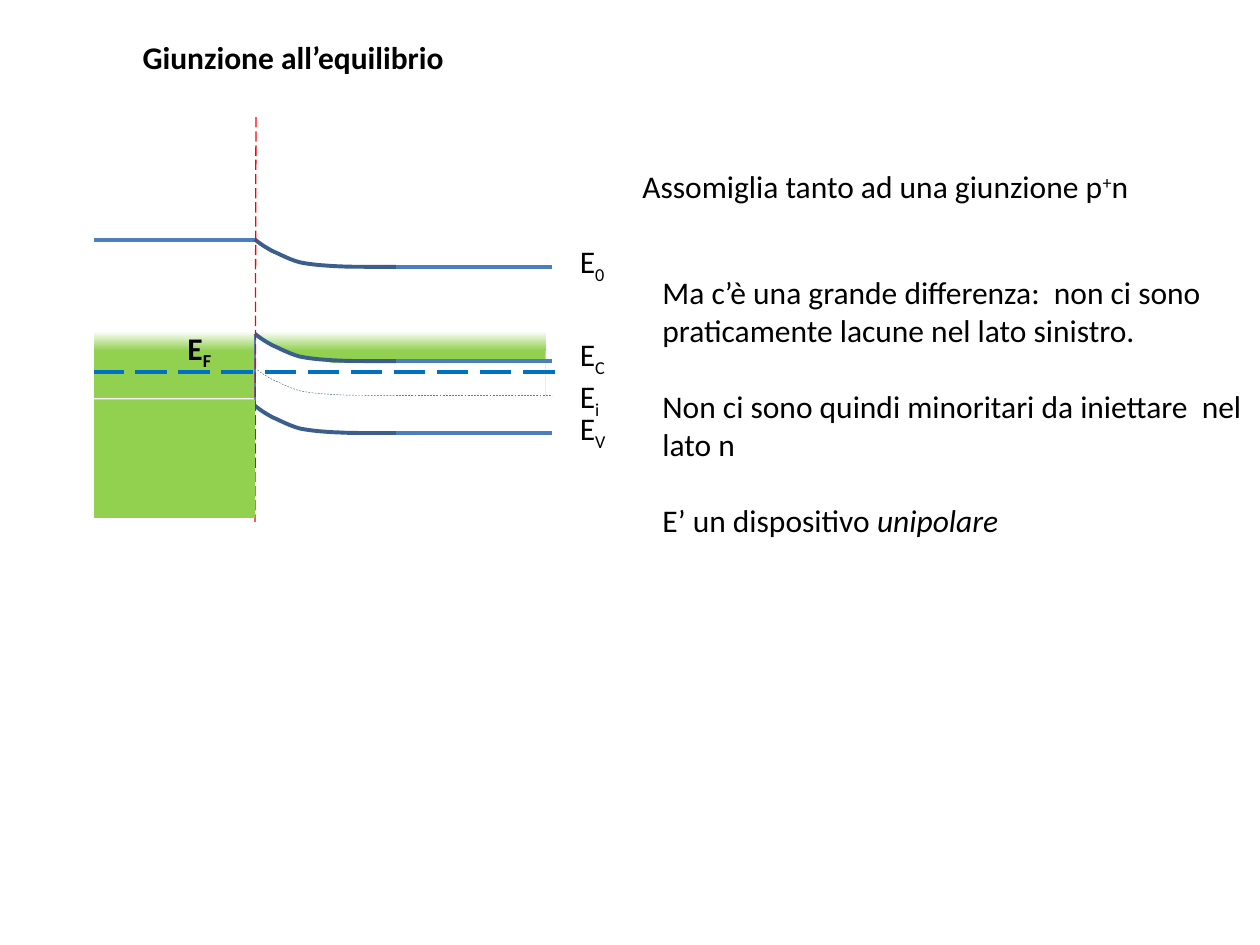
from copy import deepcopy
from dataclasses import dataclass

from lxml.etree import SubElement
from pptx import Presentation
from pptx.dml.color import RGBColor
from pptx.enum.dml import MSO_LINE
from pptx.enum.shapes import MSO_CONNECTOR, MSO_SHAPE
from pptx.enum.text import MSO_ANCHOR, MSO_AUTO_SIZE, PP_ALIGN
from pptx.oxml.ns import qn
from pptx.util import Cm, Pt


@dataclass(frozen=True)
class Theme:
    font: str = "Calibri"
    text_size: float = 18
    paragraph_gap: float = 22
    ink: str = "000000"
    paper: str = "FFFFFF"
    electrons: str = "92D050"
    band: str = "4B7EBC"
    bend: str = "3A5F8C"
    fermi: str = "0070C0"
    junction: str = "FF0000"
    thick: float = 2.25
    thin: float = 0.75
    hair: float = 0.25


LEFT, JUNCTION, BEND_END, RIGHT = 1.9, 5.14, 7.98, 11.13
BEND_DROP = 0.55
BEND_START = (0, 0)
BEND_CURVES = [
    ((0.1, 0.08), (0.2, 0.15), (0.35, 0.23)),
    ((0.51, 0.3), (0.71, 0.41), (0.91, 0.46)),
    ((1.14, 0.51), (1.47, 0.53), (1.7, 0.54)),
    ((1.93, 0.55), (2.07, 0.55), (2.28, 0.55)),
    ((2.46, 0.55), (2.67, 0.55), (2.84, 0.55)),
]


def bend_points(steps=6):
    points = [BEND_START]
    for first, second, end in BEND_CURVES:
        start = points[-1]
        for step in range(1, steps + 1):
            t = step / steps
            weights = ((1 - t) ** 3, 3 * t * (1 - t) ** 2, 3 * t * t * (1 - t), t ** 3)
            corners = (start, first, second, end)
            points.append(tuple(
                sum(weight * corner[axis] for weight, corner in zip(weights, corners))
                for axis in (0, 1)
            ))
    return points


class SlideBuilder:
    def __init__(self, slide, theme):
        self.slide = slide
        self.theme = theme

    def place(self, shape, left, top, width, height):
        shape.left, shape.top = Cm(left), Cm(top)
        shape.width, shape.height = Cm(width), Cm(height)

    def style_line(self, line, color, weight, dash=None):
        line.color.rgb = RGBColor.from_string(color)
        line.width = Pt(weight)
        if dash:
            line.dash_style = dash

    def add_spans(self, para, spans):
        para.alignment = PP_ALIGN.LEFT
        for text, look in spans:
            span = para.add_run()
            span.text = text
            font = span.font
            font.name = self.theme.font
            font.size = Pt(self.theme.text_size)
            font.color.rgb = RGBColor.from_string(self.theme.ink)
            font.bold = look.get("bold", False)
            font.italic = look.get("italic", False)
            if "baseline" in look:
                font._element.set("baseline", str(look["baseline"] * 1000))

    def title(self, text, left, top, width, height):
        box = self.slide.shapes.title
        self.place(box, left, top, width, height)
        frame = box.text_frame
        frame.word_wrap = False
        frame.auto_size = MSO_AUTO_SIZE.NONE
        frame.vertical_anchor = MSO_ANCHOR.TOP
        self.add_spans(frame.paragraphs[0], [(text, {"bold": True})])

    def body(self, paragraphs, left, top, width, height):
        box = self.slide.placeholders[1]
        self.place(box, left, top, width, height)
        frame = box.text_frame
        frame.auto_size = MSO_AUTO_SIZE.NONE
        for index, spans in enumerate(paragraphs):
            para = frame.add_paragraph() if index else frame.paragraphs[0]
            para.space_before = Pt(self.theme.paragraph_gap if index else 0)
            properties = para._p.get_or_add_pPr()
            properties.set("marL", "0")
            properties.set("indent", "0")
            SubElement(properties, qn("a:buNone"))
            self.add_spans(para, spans)

    def label(self, spans, left, top, width):
        box = self.slide.shapes.add_textbox(Cm(left), Cm(top), Cm(width), Cm(1.02))
        box.text_frame.word_wrap = False
        box.text_frame.auto_size = MSO_AUTO_SIZE.SHAPE_TO_FIT_TEXT
        self.add_spans(box.text_frame.paragraphs[0], spans)

    def energy_label(self, subscript, left, top, bold=False):
        spans = [("E", {"bold": bold}), (subscript, {"bold": bold, "baseline": -25})]
        self.label(spans, left, top, 1.04)

    def filled(self, left, top, width, height, fading=False):
        shape = self.slide.shapes.add_shape(
            MSO_SHAPE.RECTANGLE, Cm(left), Cm(top), Cm(width), Cm(height))
        shape.shadow.inherit = False
        shape.line.fill.background()
        if fading:
            self.fade(shape)
        else:
            shape.fill.solid()
            shape.fill.fore_color.rgb = RGBColor.from_string(self.theme.electrons)

    def fade(self, shape):
        shape.fill.gradient()
        shape.fill.gradient_angle = 90
        stop_list = shape._element.spPr.find(qn("a:gradFill")).find(qn("a:gsLst"))
        stop_list.insert(1, deepcopy(stop_list[0]))
        colors = (self.theme.electrons, self.theme.electrons, self.theme.paper)
        for stop, position, color in zip(shape.fill.gradient_stops, (0, 0.71, 1), colors):
            stop.position = position
            stop.color.rgb = RGBColor.from_string(color)

    def outline(self, points, close):
        corners = [(Cm(x), Cm(y)) for x, y in points]
        builder = self.slide.shapes.build_freeform(*corners[0])
        builder.add_line_segments(corners[1:], close=close)
        shape = builder.convert_to_shape()
        shape.shadow.inherit = False
        return shape

    def gap(self, points):
        shape = self.outline(points, True)
        shape.fill.solid()
        shape.fill.fore_color.rgb = RGBColor.from_string(self.theme.paper)
        shape.line.fill.background()

    def line(self, start, end, color, weight, dash=None):
        connector = self.slide.shapes.add_connector(
            MSO_CONNECTOR.STRAIGHT, *(Cm(value) for value in start + end))
        self.style_line(connector.line, color, weight, dash)
        SubElement(connector._element.spPr, qn("a:effectLst"))

    def bent_band(self, top, weight, dash=None):
        points = [(JUNCTION + x, top + y) for x, y in bend_points()]
        curve = self.outline(points, False)
        curve.fill.background()
        self.style_line(curve.line, self.theme.bend, weight, dash)
        level = top + BEND_DROP
        self.line((BEND_END, level), (RIGHT, level), self.theme.band, weight, dash)


def main():
    theme = Theme()
    deck = Presentation()
    deck.slide_width, deck.slide_height = Cm(25.4), Cm(19.05)
    page = SlideBuilder(deck.slides.add_slide(deck.slide_layouts[1]), theme)
    vacuum, conduction, intrinsic, valence, fermi = 4.83, 6.73, 7.42, 8.18, 7.49

    page.title("Giunzione all’equilibrio", 2.62, 0.64, 6.63, 1.02)
    page.body([
        [("Ma c’è una grande differenza:  non ci sono praticamente lacune nel lato sinistro.", {})],
        [("Non ci sono quindi minoritari da iniettare  nel lato n", {})],
        [("E’ un dispositivo ", {}), ("unipolare", {"italic": True})],
    ], 13.1, 5.38, 12.3, 7.19)

    page.filled(5.16, 6.68, 5.84, 1.35, fading=True)
    page.gap([(11, 7.26), (6.71, 7.32), (5.89, 7.14), (5.16, 6.81), (5.16, 8.18),
              (5.59, 8.48), (6.07, 8.74), (6.48, 8.74), (11, 8.76)])
    page.filled(LEFT, 6.68, 3.24, 1.35, fading=True)

    page.line((JUNCTION, vacuum), (LEFT, vacuum), theme.band, theme.thick)
    for top in (vacuum, conduction, valence):
        page.bent_band(top, theme.thick)
    page.line((JUNCTION, valence), (LEFT, valence), theme.paper, theme.thick)
    page.line((11.18, fermi), (LEFT, fermi), theme.fermi, theme.thick, MSO_LINE.LONG_DASH)
    page.line((JUNCTION, conduction), (JUNCTION, valence), theme.band, theme.thin)
    page.line((5.16, 2.36), (JUNCTION, 10.52), theme.junction, theme.thin, MSO_LINE.LONG_DASH)

    for subscript, top in (("0", 4.75), ("C", 6.63), ("V", 8.13), ("i", 7.47)):
        page.energy_label(subscript, 11.44, top)
    page.energy_label("F", 3.53, 6.5, bold=True)
    page.bent_band(intrinsic, theme.hair, MSO_LINE.DASH)
    page.label([("Assomiglia tanto ad una giunzione p", {}), ("+", {"baseline": 30}), ("n", {})],
               12.7, 3.25, 10.57)
    page.filled(LEFT, 8.05, 3.24, 2.39)
    deck.save("out.pptx")


if __name__ == "__main__":
    main()
